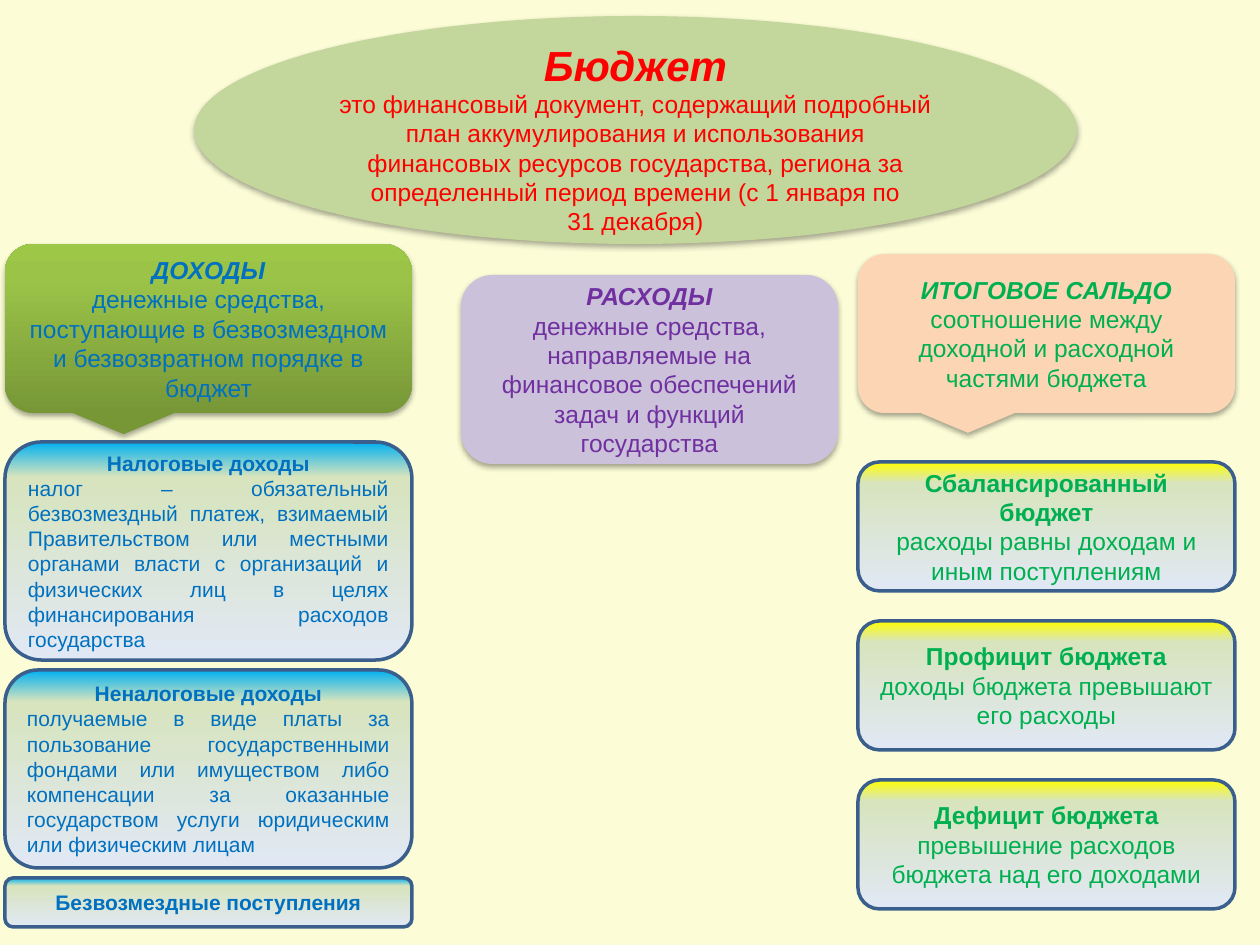
from lxml.etree import SubElement
from pptx import Presentation
from pptx.dml.color import RGBColor
from pptx.enum.shapes import MSO_SHAPE as Shape
from pptx.enum.text import MSO_ANCHOR as Anchor, MSO_AUTO_SIZE as AutoSize, PP_ALIGN as Align
from pptx.oxml.ns import qn
from pptx.util import Emu, Pt

PX = 914400 // 126
BLUE, PURPLE, GREEN, RED = "0070C0", "7030A0", "00B050", "FF0000"
CARD_OUTLINE = "3A5F8C"
INCOME_HEADER = [(0, "779737"), (80, "9BC348"), (100, "9DC746")]
INCOME_CARD = [(0, "00B0F0"), (16, "D7E4BD"), (100, "E1E8F5")]
BALANCE_CARD = [(0, "FFFF00"), *INCOME_CARD[1:]]

INCOME_KINDS = [
    (218, "Налоговые доходы",
     "налог – обязательный безвозмездный платеж, взимаемый Правительством или местными органами "
     "власти с организаций и физических лиц в целях финансирования расходов государства"),
    (198, "Неналоговые доходы",
     "получаемые в виде платы за пользование государственными фондами или имуществом либо "
     "компенсации за оказанные государством услуги юридическим или физическим лицам"),
    (49, "Безвозмездные поступления", ""),
]
BALANCE_KINDS = [
    ("Сбалансированный бюджет", "расходы равны доходам и иным поступлениям"),
    ("Профицит бюджета", "доходы бюджета превышают его расходы"),
    ("Дефицит бюджета", "превышение расходов бюджета над его доходами"),
]


def color(value):
    """Turn a hex string into a colour."""
    return RGBColor.from_string(value)


def px(*lengths):
    """Turn lengths in px into EMU."""
    return [Emu(length * PX) for length in lengths]


def write(paragraph, text, *, size, ink, bold=False, italic=False, align=Align.CENTER):
    """Write formatted text into a paragraph."""
    paragraph.text = text
    paragraph.alignment = align
    for run in paragraph.runs:
        font = run.font
        font.name, font.size, font.bold, font.italic = "Arial", Pt(size), bold, italic
        font.color.rgb = color(ink)


def paint_gradient(shape, stops, angle):
    """Fill a shape with a linear gradient of (percent, colour) stops."""
    shape.fill.gradient()
    shape.fill.gradient_angle = angle
    stop_list = shape._element.spPr.find(qn("a:gradFill")).find(qn("a:gsLst"))
    stop_list.clear()
    for percent, value in stops:
        stop = SubElement(stop_list, qn("a:gs"), pos=str(percent * 1000))
        SubElement(stop, qn("a:srgbClr"), val=value)


def cast_shadow(shape):
    """Give a shape a soft shadow below it."""
    effects = shape._element.spPr.find(qn("a:effectLst"))
    shadow = SubElement(effects, qn("a:outerShdw"), blurRad="40000", dist="23000",
                        dir="5400000", rotWithShape="0")
    black = SubElement(shadow, qn("a:srgbClr"), val="000000")
    SubElement(black, qn("a:alpha"), val="35000")


def add_panel(slide, kind, box, *, fill, angle=270, outline=None):
    """Add an outlined card, or a shadowed panel when no outline is given."""
    panel = slide.shapes.add_shape(kind, *px(*box))
    panel.shadow.inherit = False
    if isinstance(fill, str):
        panel.fill.solid()
        panel.fill.fore_color.rgb = color(fill)
    else:
        paint_gradient(panel, fill, angle)
    if outline:
        panel.line.color.rgb = color(outline)
        panel.line.width = Pt(2)
    else:
        panel.line.fill.background()
        cast_shadow(panel)
    panel.text_frame.word_wrap = True
    panel.text_frame.vertical_anchor = Anchor.MIDDLE
    return panel


def describe(panel, term, meaning, *, size, ink, italic=False, align=Align.CENTER):
    """Write a bold term and its meaning into a panel."""
    frame = panel.text_frame
    write(frame.paragraphs[0], term, size=size, ink=ink, bold=True, italic=italic)
    if meaning:
        write(frame.add_paragraph(), meaning, size=size, ink=ink, align=align)


def add_budget(slide, box):
    """Place the title and the definition of the budget on an ellipse."""
    left, top, width, height = box
    ellipse = add_panel(slide, Shape.OVAL, box, fill="C3D69B")
    ellipse.text_frame.margin_top, = px(71)
    write(ellipse.text_frame.paragraphs[0],
          "это финансовый документ, содержащий подробный план аккумулирования и использования "
          "финансовых ресурсов государства, региона за определенный период времени "
          "(с 1 января по\n31 декабря)", size=14, ink=RED)

    title = slide.shapes.title
    title.left, title.top, title.width, title.height = px(left + 130, top + 18, width - 260, 62)
    title.text_frame.auto_size = AutoSize.NONE
    title.text_frame.vertical_anchor = Anchor.MIDDLE
    write(title.text_frame.paragraphs[0], "Бюджет", size=24, ink=RED, bold=True, italic=True)
    slide.shapes._spTree.append(title._element)


def add_income(slide, box):
    """Place the income callout and the cards of its kinds."""
    left, top, width, header_height = box
    header = add_panel(slide, Shape.ROUNDED_RECTANGULAR_CALLOUT, box, fill=INCOME_HEADER, angle=90)
    describe(header, "ДОХОДЫ",
             "денежные средства, поступающие в безвозмездном и безвозвратном порядке в бюджет",
             size=14, ink=BLUE, italic=True)
    card_top = top + header_height + 29
    for height, term, meaning in INCOME_KINDS:
        card = add_panel(slide, Shape.ROUNDED_RECTANGLE, (left, card_top, width, height),
                         fill=INCOME_CARD, outline=CARD_OUTLINE)
        describe(card, term, meaning, size=12, ink=BLUE, align=Align.JUSTIFY)
        card_top += height + 10


def add_expenses(slide, box):
    """Place the panel about expenses."""
    panel = add_panel(slide, Shape.ROUNDED_RECTANGLE, box, fill="CCC1DA")
    describe(panel, "РАСХОДЫ",
             "денежные средства, направляемые на финансовое обеспечений задач и функций государства",
             size=14, ink=PURPLE, italic=True)


def add_balance(slide, box):
    """Place the balance callout and the cards of its outcomes."""
    left, top, width, header_height = box
    header = add_panel(slide, Shape.ROUNDED_RECTANGULAR_CALLOUT, box, fill="FCD5B5")
    describe(header, "ИТОГОВОЕ САЛЬДО", "соотношение между доходной и расходной частями бюджета",
             size=14, ink=GREEN, italic=True)
    first_top = top + header_height + 49
    for index, (term, meaning) in enumerate(BALANCE_KINDS):
        card = add_panel(slide, Shape.ROUNDED_RECTANGLE, (left, first_top + index * 159, width, 129),
                         fill=BALANCE_CARD, outline=CARD_OUTLINE)
        describe(card, term, meaning, size=14, ink=GREEN)


def main():
    """Build the slide and save it."""
    deck = Presentation()
    deck.slide_width, deck.slide_height = px(1260, 945)
    slide = deck.slides.add_slide(deck.slide_layouts[5])
    slide.background.fill.solid()
    slide.background.fill.fore_color.rgb = color("FCFDD7")
    add_budget(slide, (194, 16, 883, 228))
    add_income(slide, (5, 244, 407, 169))
    add_expenses(slide, (461, 275, 377, 189))
    add_balance(slide, (858, 254, 377, 159))
    deck.save("out.pptx")


if __name__ == "__main__":
    main()
